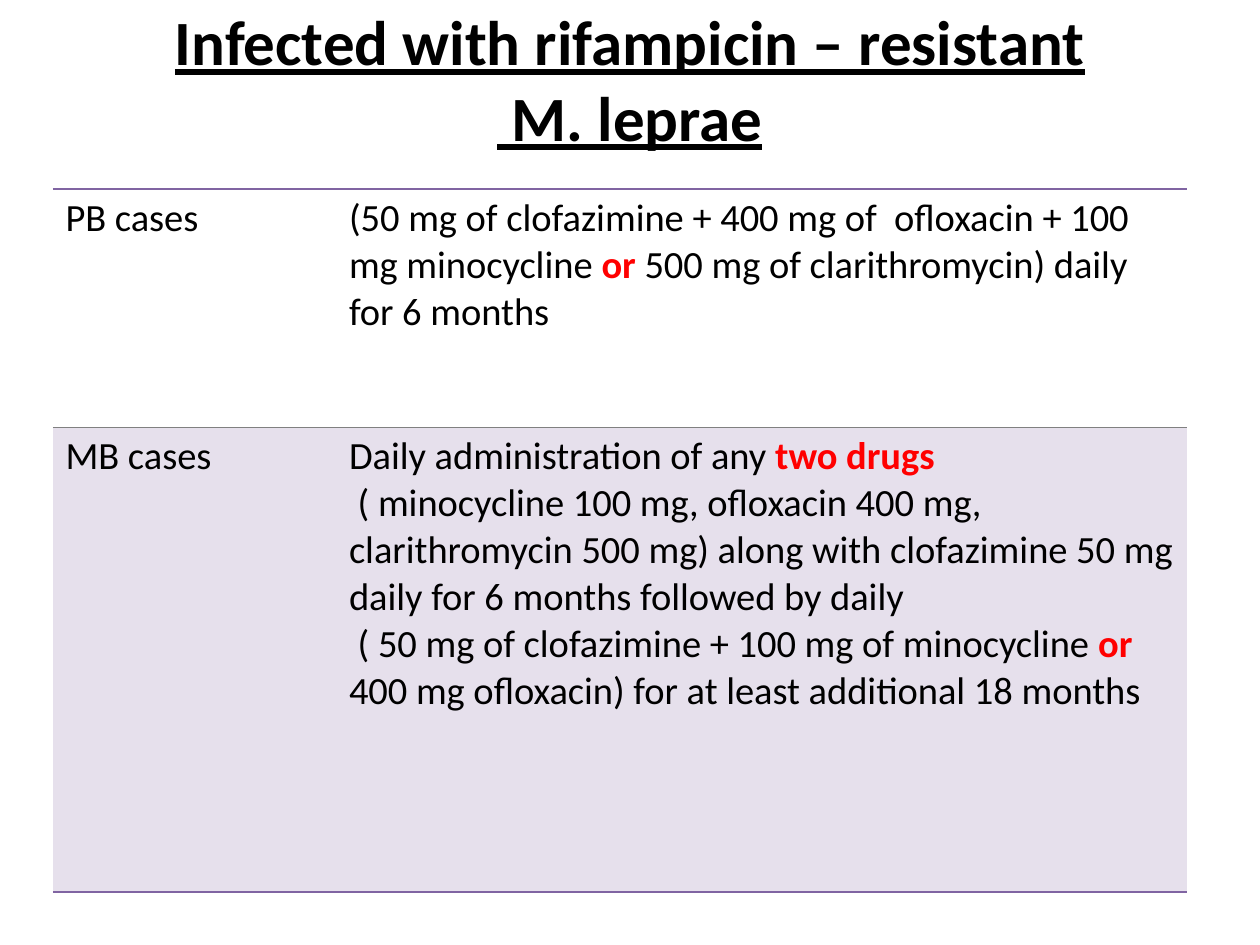
from pptx import Presentation
from pptx.util import Inches, Pt
from pptx.dml.color import RGBColor
from pptx.enum.text import MSO_ANCHOR as Anchor, PP_ALIGN as Align
from pptx.oxml.ns import qn
from lxml.etree import SubElement as Sub

FONT = "Calibri"
BLACK, RED, PURPLE, LILAC, GREY = "000000", "FF0000", "8064A2", "E6E0EC", "808080"
WIDE, HIGH = 10, 7.5
COLS = [2.25, 6.75]
ROWS = [1.89, 3.69]

# Each cell is a list of paragraphs; each paragraph is a list of (text, marked).
CELLS = [
    [
        [[("PB cases", False)]],
        [[("(50 mg of clofazimine + 400 mg of  ofloxacin + 100 mg minocycline ", False),
          ("or", True),
          (" 500 mg of clarithromycin) daily for 6 months", False)]],
    ],
    [
        [[("MB cases", False)]],
        [[("Daily administration of any ", False), ("two drugs", True)],
         [(" ( minocycline 100 mg, ofloxacin 400 mg, clarithromycin 500 mg) "
           "along with clofazimine 50 mg daily for 6 months followed by daily", False)],
         [(" ( 50 mg of clofazimine + 100 mg of minocycline ", False),
          ("or", True),
          (" 400 mg ofloxacin) for at least additional 18 months", False)]],
    ],
]
FILLS = [None, LILAC]
# Top and bottom line of each row: (colour, width)
EDGE, INNER = (PURPLE, 1), (GREY, 0.5)
LINES = [(EDGE, INNER), (INNER, EDGE)]


def color(code):
    return RGBColor.from_string(code)


def add_run(para, text, size, code=BLACK, bold=False, under=False):
    run = para.add_run()
    run.text = text
    font = run.font
    font.name, font.size = FONT, Pt(size)
    font.bold, font.underline = bold, under
    font.color.rgb = color(code)


def add_title(slide, lines):
    box = slide.shapes.add_textbox(Inches(0.05 * WIDE), Inches(0.04 * HIGH),
                                   Inches(0.9 * WIDE), Inches(1.25))
    frame = box.text_frame
    frame.word_wrap = True
    # The heading sits high and grows upward
    frame.vertical_anchor = Anchor.BOTTOM
    frame.margin_bottom = Inches(0.33)
    para = frame.paragraphs[0]
    para.alignment = Align.CENTER
    for i, line in enumerate(lines):
        if i:
            para.add_line_break()
        add_run(para, line, 36, bold=True, under=True)


def set_lines(cell, top, bottom):
    """Draw the cell's top and bottom lines and clear its sides."""
    props = cell._tc.get_or_add_tcPr()
    sides = {"a:lnL": None, "a:lnR": None, "a:lnT": top, "a:lnB": bottom}
    for i, (tag, line) in enumerate(sides.items()):
        edge = Sub(props, qn(tag))
        props.insert(i, edge)
        if line is None:
            Sub(edge, qn("a:noFill"))
            continue
        code, width = line
        edge.set("w", str(Pt(width)))
        Sub(Sub(edge, qn("a:solidFill")), qn("a:srgbClr")).set("val", code)


def fill_cell(cell, paras, fill, lines):
    if fill:
        cell.fill.solid()
        cell.fill.fore_color.rgb = color(fill)
    else:
        cell.fill.background()
    set_lines(cell, *lines)
    frame = cell.text_frame
    for i, runs in enumerate(paras):
        para = frame.add_paragraph() if i else frame.paragraphs[0]
        for text, marked in runs:
            add_run(para, text, 22, RED if marked else BLACK, bold=marked)


def add_grid(slide):
    table = slide.shapes.add_table(
        len(ROWS), len(COLS), Inches(0.42), Inches(0.2 * HIGH),
        Inches(sum(COLS)), Inches(sum(ROWS))).table
    table.first_row = table.horz_banding = False
    for col, width in zip(table.columns, COLS):
        col.width = Inches(width)
    for r, height in enumerate(ROWS):
        table.rows[r].height = Inches(height)
        for c, paras in enumerate(CELLS[r]):
            fill_cell(table.cell(r, c), paras, FILLS[r], LINES[r])


def main():
    deck = Presentation()
    deck.slide_width, deck.slide_height = Inches(WIDE), Inches(HIGH)
    slide = deck.slides.add_slide(deck.slide_layouts[6])
    # Heading
    add_title(slide, ["Infected with rifampicin – resistant", " M. leprae"])
    # Treatment table
    add_grid(slide)
    deck.save("out.pptx")


if __name__ == "__main__":
    main()
